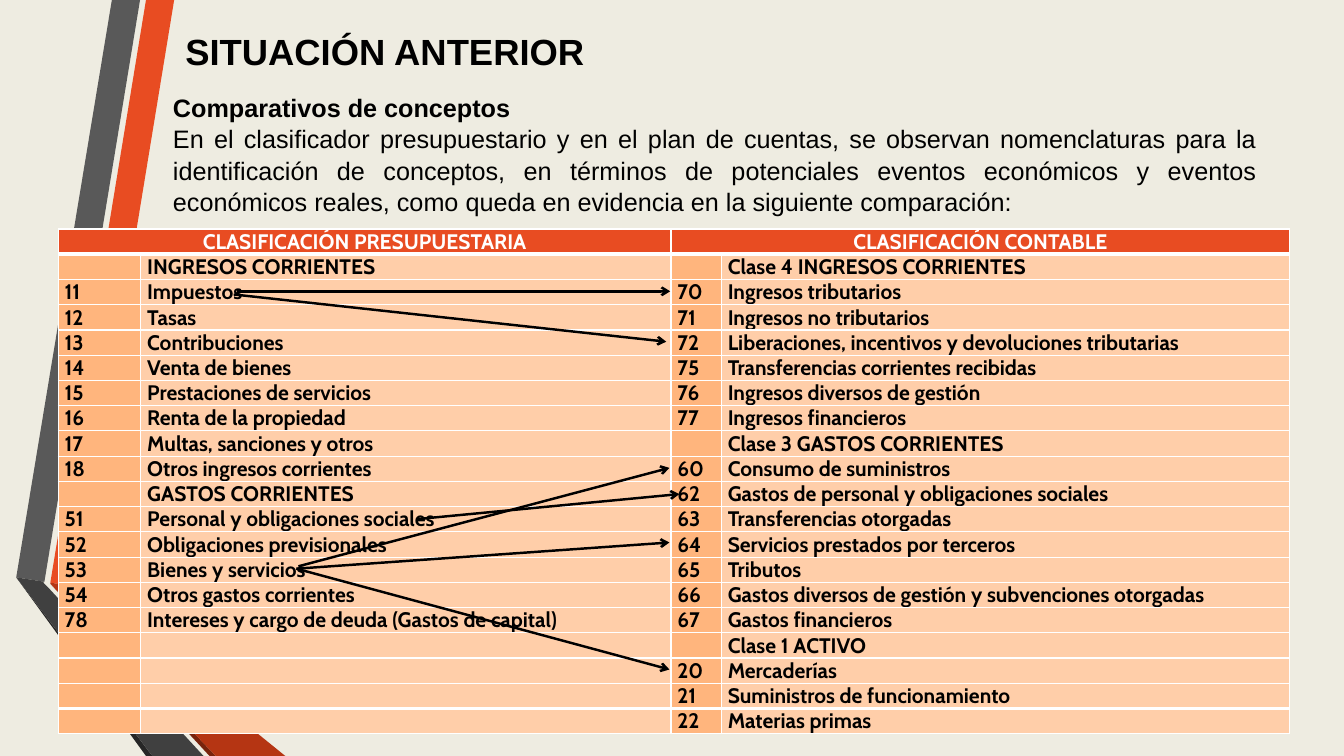
"""Builds a slide comparing budget and accounting classifications."""
from lxml import etree
from pptx import Presentation
from pptx.dml.color import RGBColor
from pptx.enum.shapes import MSO_CONNECTOR
from pptx.enum.text import MSO_ANCHOR, MSO_AUTO_SIZE, PP_ALIGN
from pptx.oxml.ns import qn
from pptx.util import Cm, Pt

STRAIGHT = MSO_CONNECTOR.STRAIGHT
MIDDLE = MSO_ANCHOR.MIDDLE
GROW = MSO_AUTO_SIZE.SHAPE_TO_FIT_TEXT
LEFT, CENTER, JUSTIFY = PP_ALIGN.LEFT, PP_ALIGN.CENTER, PP_ALIGN.JUSTIFY

COLORS = {
    "background": "EEECE1", "orange": "E84C22", "gray": "595959",
    "black": "000000", "white": "FFFFFF", "code": "FFB57D", "concept": "FFCEA9",
    "shadow": "262626", "maroon": "78230D", "rust": "B53513", "charcoal": "404040",
}

RIBBONS = [
    ("orange", [(1.27, 14.68), (1.96, 14.81), (4.39, 0), (3.68, 0)]),
    ("gray", [(3.53, 0), (2.82, 0), (0.41, 14.55), (1.12, 14.66)]),
    ("shadow", [(0.41, 14.55), (3.68, 19.05), (3.84, 19.05)]),
    ("maroon", [(1.27, 14.71), (5.28, 19.05), (5.44, 19.05)]),
    ("rust", [(1.27, 14.71), (5.44, 19.05), (7.19, 19.05), (1.96, 14.81), (1.27, 14.68)]),
    ("charcoal", [(5.13, 19.05), (1.22, 14.81), (1.09, 14.68), (1.12, 14.66),
                  (0.41, 14.55), (3.84, 19.05)]),
]

INTRO = (
    "En el clasificador presupuestario y en el plan de cuentas, se observan "
    "nomenclaturas para la identificación de conceptos, en términos de potenciales "
    "eventos económicos y eventos económicos reales, como queda en evidencia en la "
    "siguiente comparación:"
)

COLUMN_WIDTHS = [2.08, 13.36, 1.27, 14.32]
ROW_HEIGHT = 0.63
ROWS = [
    ("CLASIFICACIÓN PRESUPUESTARIA", "", "CLASIFICACIÓN CONTABLE", ""),
    ("", "INGRESOS CORRIENTES", "", "Clase 4 INGRESOS CORRIENTES"),
    ("11", "Impuestos", "70", "Ingresos tributarios"),
    ("12", "Tasas", "71", "Ingresos no tributarios"),
    ("13", "Contribuciones", "72", "Liberaciones, incentivos y devoluciones tributarias"),
    ("14", "Venta de bienes", "75", "Transferencias corrientes recibidas"),
    ("15", "Prestaciones de servicios", "76", "Ingresos diversos de gestión"),
    ("16", "Renta de la propiedad", "77", "Ingresos financieros"),
    ("17", "Multas, sanciones y otros", "", "Clase 3 GASTOS CORRIENTES"),
    ("18", "Otros ingresos corrientes", "60", "Consumo de suministros"),
    ("", "GASTOS CORRIENTES", "62", "Gastos de personal y obligaciones sociales"),
    ("51", "Personal y obligaciones sociales", "63", "Transferencias otorgadas"),
    ("52", "Obligaciones previsionales", "64", "Servicios prestados por terceros"),
    ("53", "Bienes y servicios", "65", "Tributos"),
    ("54", "Otros gastos corrientes", "66",
     "Gastos diversos de gestión y subvenciones otorgadas"),
    ("78", "Intereses y cargo de deuda (Gastos de capital)", "67", "Gastos financieros"),
    ("", "", "", "Clase 1 ACTIVO"),
    ("", "", "20", "Mercaderías"),
    ("", "", "21", "Suministros de funcionamiento"),
    ("", "", "22", "Materias primas"),
]

ARROWS = [
    ((10.52, 13.08), (17.12, 12.45)),
    ((7.52, 14.27), (16.87, 11.79)),
    ((7.47, 14.33), (16.87, 13.67)),
    ((7.47, 14.33), (16.87, 16.87)),
    ((5.97, 7.34), (16.89, 7.34)),
    ((5.89, 7.42), (16.79, 8.61)),
]


def color(name):
    """Return the named palette colour."""
    return RGBColor.from_string(COLORS[name])


def write(para, text, size=18, font="Arial", ink="black", bold=False, align=LEFT, spacing=None):
    """Write formatted text into a paragraph."""
    para.alignment = align
    para.line_spacing = spacing
    if not text:
        para._p.get_or_add_endParaRPr().set("sz", str(size * 100))
        return
    span = para.add_run()
    span.text = text
    span.font.size = Pt(size)
    span.font.name = font
    span.font.bold = bold
    span.font.color.rgb = color(ink)


def add_ribbon(page, fill, points):
    """Draw one closed band of the side decoration."""
    corners = [(Cm(x), Cm(y)) for x, y in points]
    builder = page.shapes.build_freeform(*corners[0])
    builder.add_line_segments(corners[1:], close=True)
    ribbon = builder.convert_to_shape()
    ribbon.shadow.inherit = False
    ribbon.fill.solid()
    ribbon.fill.fore_color.rgb = color(fill)
    ribbon.line.fill.background()


def add_text(page, left, top, width, height):
    """Add a wrapping text box and return its frame."""
    box = page.shapes.add_textbox(Cm(left), Cm(top), Cm(width), Cm(height))
    frame = box.text_frame
    frame.word_wrap = True
    frame.auto_size = GROW
    frame.vertical_anchor = MIDDLE
    frame.margin_left = frame.margin_right = Cm(0.25)
    frame.margin_top, frame.margin_bottom = Cm(0.43), Cm(0.1)
    return frame


def set_border(cell, side, width):
    """Give one side of a cell a white border."""
    line = etree.SubElement(cell._tc.get_or_add_tcPr(), qn(f"a:ln{side}"), w=str(Pt(width)))
    fill = etree.SubElement(line, qn("a:solidFill"))
    etree.SubElement(fill, qn("a:srgbClr"), val=COLORS["white"])


def format_cell(cell, text, row, column):
    """Fill, border and write one cell of the comparison."""
    last = len(ROWS) - 1
    thick_edges = {(0, "B"), (1, "T"), (last - 1, "B"), (last, "T")}
    for side in "LRTB":
        set_border(cell, side, 3 if (row, side) in thick_edges else 1)
    header = row == 0
    fill = "orange" if header else ("code", "concept")[column % 2]
    cell.fill.solid()
    cell.fill.fore_color.rgb = color(fill)
    cell.margin_left = cell.margin_right = Cm(0.16)
    cell.margin_top = cell.margin_bottom = 0
    write(cell.text_frame.paragraphs[0], text, size=15, font="Cabin", bold=True,
          ink="white" if header else "black", align=CENTER if header else LEFT)


def add_comparison(page, left, top):
    """Add the table of both classifications."""
    frame = page.shapes.add_table(
        len(ROWS), len(COLUMN_WIDTHS), Cm(left), Cm(top),
        Cm(sum(COLUMN_WIDTHS)), Cm(ROW_HEIGHT * len(ROWS)))
    table = frame.table
    for column, width in zip(table.columns, COLUMN_WIDTHS):
        column.width = Cm(width)
    for row, texts in enumerate(ROWS):
        table.rows[row].height = Cm(ROW_HEIGHT)
        for column, text in enumerate(texts):
            format_cell(table.cell(row, column), text, row, column)
    for column in (0, 2):
        table.cell(0, column).merge(table.cell(0, column + 1))


def add_arrow(page, start, end):
    """Link two concepts with an arrow."""
    points = [Cm(value) for value in (*start, *end)]
    arrow = page.shapes.add_connector(STRAIGHT, *points)
    arrow.line.width = Pt(1.75)
    arrow.line.color.rgb = color("black")
    etree.SubElement(arrow.line._get_or_add_ln(), qn("a:tailEnd"), type="arrow")
    etree.SubElement(arrow._element.spPr, qn("a:effectLst"))


def main():
    """Build and save the deck."""
    deck = Presentation()
    deck.slide_width, deck.slide_height = Cm(33.87), Cm(19.05)
    page = deck.slides.add_slide(deck.slide_layouts[6])
    page.background.fill.solid()
    page.background.fill.fore_color.rgb = color("background")
    for fill, points in RIBBONS:
        add_ribbon(page, fill, points)
    intro = add_text(page, 4.11, 1.91, 27.81, 3.61)
    write(intro.paragraphs[0], "Comparativos de conceptos", bold=True, spacing=1.04)
    write(intro.add_paragraph(), INTRO, align=JUSTIFY, spacing=1.04)
    title = add_text(page, 4.42, 0.3, 27.5, 1.65)
    write(title.paragraphs[0], "SITUACIÓN ANTERIOR", size=26, bold=True, align=JUSTIFY)
    add_comparison(page, 1.47, 5.77)
    for start, end in ARROWS:
        add_arrow(page, start, end)
    deck.save("out.pptx")


if __name__ == "__main__":
    main()
